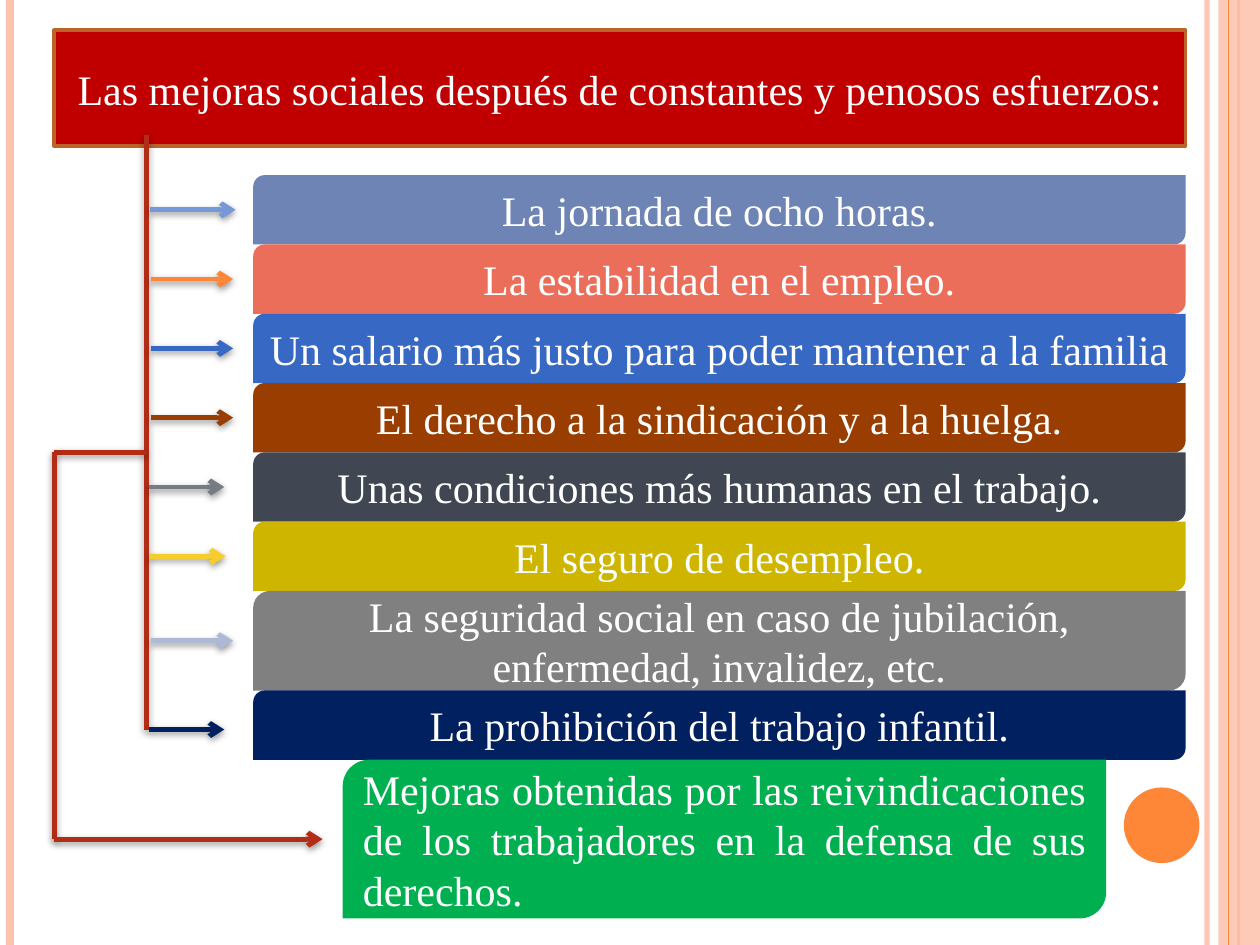
from lxml.etree import SubElement
from pptx import Presentation
from pptx.dml.color import RGBColor
from pptx.enum.shapes import MSO_CONNECTOR as Link, MSO_SHAPE as Shape
from pptx.enum.text import MSO_ANCHOR as Anchor, PP_ALIGN as Align
from pptx.oxml.ns import qn
from pptx.util import Inches, Pt

WIDTH, HEIGHT = 10, 7.5
LEFT, RIGHT = 0.43, 9.41
TRUNK, BANNER_LEFT = 1.16, 2.01
FIRST_ROW, ROW = 1.39, 0.55
TRUNK_TOP, TRUNK_END = 1.07, 5.79
PEACH, ORANGE, BRICK = "FEC3AE", "FE8637", "B32C16"

IMPROVEMENTS = [
    ("La jornada de ocho horas.", "6E84B4", "7598D9", 1.19, 1.87, ROW),
    ("La estabilidad en el empleo.", "EB6E5A", ORANGE, 1.2, 1.85, ROW),
    ("Un salario más justo para poder mantener a la familia", "3668C4", "3668C4", 1.2, 1.85, ROW),
    ("El derecho a la sindicación y a la huelga.", "9A3D01", "9A3D01", 1.2, 1.85, ROW),
    ("Unas condiciones más humanas en el trabajo.", "414752", "777C84", 1.18, 1.78, ROW),
    ("El seguro de desempleo.", "CEB500", "F5CD2D", 1.18, 1.79, ROW),
    ("La seguridad social en caso de jubilación, enfermedad, invalidez, etc.",
     "808080", "AEBAD5", 1.2, 1.85, 0.79),
    ("La prohibición del trabajo infantil.", "002060", "002060", 1.18, 1.78, ROW),
]


def paint(color_format, color, opacity=100):
    color_format.rgb = RGBColor.from_string(color)
    return opacity


def fill_solid(shape, color, opacity=100):
    shape.fill.solid()
    paint(shape.fill.fore_color, color)
    if opacity < 100:
        tint = shape.element.spPr.find(qn("a:solidFill"))[0]
        SubElement(tint, qn("a:alpha"), val=str(opacity * 1000))


def write(shape, text, align=Align.CENTER, size=24, color="FFFFFF", side=0.1):
    frame = shape.text_frame
    frame.word_wrap = True
    frame.vertical_anchor = Anchor.MIDDLE
    frame.margin_left = frame.margin_right = Inches(side)
    paragraph = frame.paragraphs[0]
    paragraph.alignment = align
    run = paragraph.add_run()
    run.text = text
    run.font.size = Pt(size)
    run.font.name = "Times New Roman"
    paint(run.font.color, color)


def add_block(slide, kind, box, color, opacity=100):
    block = slide.shapes.add_shape(kind, *map(Inches, box))
    block.shadow.inherit = False
    fill_solid(block, color, opacity)
    block.line.fill.background()
    return block


def add_line(slide, start, end, color, weight=2.75, arrow=False, shadow=True, opacity=100):
    line = slide.shapes.add_connector(Link.STRAIGHT, *map(Inches, start + end))
    line.line.width = Pt(weight)
    line.line.fill.solid()
    paint(line.line.fill.fore_color, color)
    properties = line.element.spPr
    outline = properties.find(qn("a:ln"))
    if opacity < 100:
        tint = outline.find(qn("a:solidFill"))[0]
        SubElement(tint, qn("a:alpha"), val=str(opacity * 1000))
    if arrow:
        SubElement(outline, qn("a:tailEnd"), type="arrow")
    effects = SubElement(properties, qn("a:effectLst"))
    if shadow:
        cast = SubElement(effects, qn("a:outerShdw"), blurRad=str(Pt(4)), dist=str(Pt(1.6)),
                          dir="5400000", rotWithShape="0")
        black = SubElement(cast, qn("a:srgbClr"), val="000000")
        SubElement(black, qn("a:alpha"), val="42000")


def add_side_bands(slide):
    def stripe(x, color, weight, opacity=100):
        add_line(slide, (x, 0), (x, HEIGHT), color, weight, shadow=False, opacity=opacity)

    stripe(9.58, PEACH, 3, 93)
    stripe(0.08, PEACH, 4.5)
    stripe(9.83, ORANGE, 1.5)
    add_block(slide, Shape.RECTANGLE, (9.67, 0, WIDTH - 9.67, HEIGHT), PEACH, 87)
    stripe(9.75, ORANGE, 0.75)
    add_block(slide, Shape.OVAL, (8.92, 6.25, 0.6, 0.6), ORANGE)


def add_title(slide, text):
    title = slide.shapes.title
    title.left, title.top = Inches(LEFT), Inches(0.24)
    title.width, title.height = Inches(RIGHT - LEFT), Inches(0.92)
    tape = SubElement(title.element.spPr, qn("a:prstGeom"), prst="flowChartPunchedTape")
    SubElement(tape, qn("a:avLst"))
    fill_solid(title, "C00000")
    title.line.width = Pt(2)
    title.line.fill.solid()
    paint(title.line.fill.fore_color, "BC6329")
    write(title, text)


def add_improvements(slide):
    add_line(slide, (TRUNK, TRUNK_TOP), (TRUNK, TRUNK_END), BRICK)
    top = FIRST_ROW
    for text, color, arrow_color, start, end, height in IMPROVEMENTS:
        box = (BANNER_LEFT, top, RIGHT - BANNER_LEFT, height)
        write(add_block(slide, Shape.ROUND_2_DIAG_RECTANGLE, box, color), text, side=0.05)
        is_last = text == IMPROVEMENTS[-1][0]
        middle = TRUNK_END if is_last else top + height / 2
        add_line(slide, (start, middle), (end, middle), arrow_color, arrow=True)
        top += height
    return top


def add_conclusion(slide, top, text):
    height = 1.26
    box = (2.72, top, 6.06, height)
    write(add_block(slide, Shape.ROUND_2_DIAG_RECTANGLE, box, "00B050"), text, Align.JUSTIFY)
    branch, middle = FIRST_ROW + 4 * ROW, top + height / 2
    add_line(slide, (TRUNK, branch), (LEFT, branch), BRICK)
    add_line(slide, (LEFT, branch), (LEFT, middle), BRICK)
    add_line(slide, (LEFT, middle), (2.56, middle), BRICK, arrow=True)


def main():
    deck = Presentation()
    deck.slide_width, deck.slide_height = Inches(WIDTH), Inches(HEIGHT)
    slide = deck.slides.add_slide(deck.slide_layouts[5])
    add_side_bands(slide)
    add_title(slide, "Las mejoras sociales después de constantes y penosos esfuerzos:")
    bottom = add_improvements(slide)
    add_conclusion(slide, bottom, "Mejoras obtenidas por las reivindicaciones de los "
                                  "trabajadores en la defensa de sus derechos.")
    deck.save("out.pptx")


if __name__ == "__main__":
    main()
